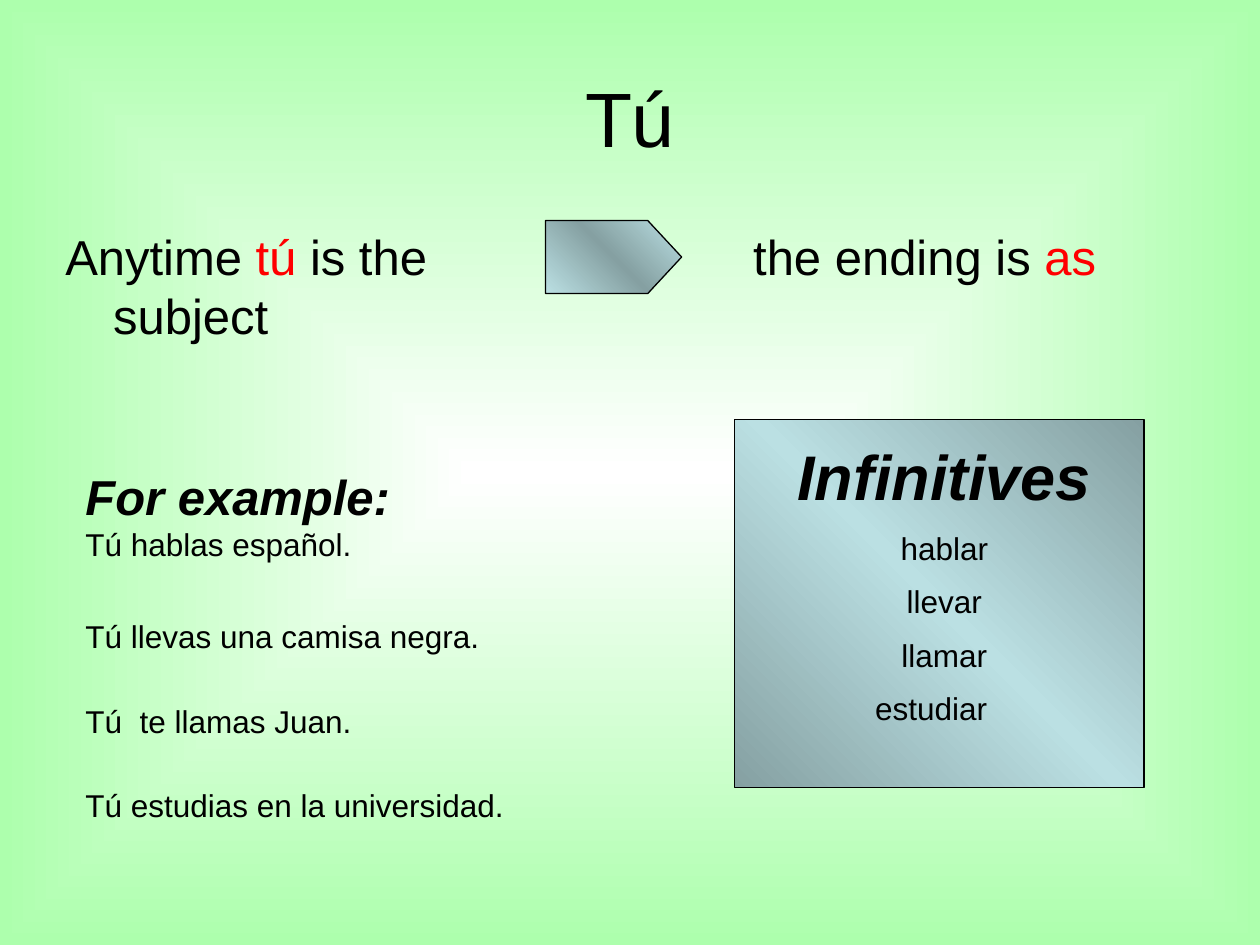
from dataclasses import dataclass

from lxml import etree
from pptx import Presentation
from pptx.dml.color import RGBColor
from pptx.enum.shapes import MSO_SHAPE
from pptx.enum.text import MSO_ANCHOR, MSO_AUTO_SIZE, PP_ALIGN
from pptx.oxml import parse_xml
from pptx.oxml.ns import nsdecls, qn
from pptx.util import Inches, Pt

CENTER = PP_ALIGN.CENTER
LEFT = PP_ALIGN.LEFT
MIDDLE = MSO_ANCHOR.MIDDLE
TOP = MSO_ANCHOR.TOP
GROW = MSO_AUTO_SIZE.SHAPE_TO_FIT_TEXT
FIXED = MSO_AUTO_SIZE.NONE
PENTAGON = MSO_SHAPE.PENTAGON
RECT = MSO_SHAPE.RECTANGLE


@dataclass(frozen=True)
class Theme:
    font: str = "Arial"
    ink: str = "000000"
    accent: str = "FF0000"
    white: str = "FFFFFF"
    mint: str = "ADFFAD"
    steel: str = "BBE0E3"
    shade: int = 46275
    title: int = 44
    head: int = 36
    lead: int = 28
    body: int = 18
    line: float = 0.75


THEME = Theme()


@dataclass(frozen=True)
class Box:
    left: float
    top: float
    width: float
    height: float

    def place(self) -> tuple:
        return tuple(map(Inches, (self.left, self.top, self.width, self.height)))


@dataclass(frozen=True)
class Span:
    text: str
    size: int = THEME.body
    color: str = THEME.ink
    strong: bool = False


@dataclass(frozen=True)
class Para:
    spans: tuple
    align: int = LEFT
    hang: float = 0
    inset: float = 0
    before: int = 0


@dataclass(frozen=True)
class Note:
    box: Box
    paras: tuple
    anchor: int = TOP
    size: int = GROW


@dataclass(frozen=True)
class Panel:
    box: Box
    kind: int
    darks: tuple
    adjust: tuple = ()


def set_grad(parent, stops: list, tail: str) -> None:
    marks = "".join(
        f'<a:gs pos="{pos * 1000}"><a:srgbClr val="{color}">'
        + (f'<a:shade val="{THEME.shade}"/>' if dark else "")
        + "</a:srgbClr></a:gs>"
        for pos, color, dark in stops
    )
    grad = parse_xml(
        f'<a:gradFill {nsdecls("a")} rotWithShape="1">'
        f"<a:gsLst>{marks}</a:gsLst>{tail}</a:gradFill>"
    )
    parent.replace(parent.find(qn("a:solidFill")), grad)


def draw_back(slide) -> None:
    slide.background.fill.solid()
    stops = [(0, THEME.white, False), (100, THEME.mint, False)]
    tail = '<a:path path="shape"><a:fillToRect l="50000" t="50000" r="50000" b="50000"/></a:path>'
    set_grad(slide.element.find(".//" + qn("p:bgPr")), stops, tail)


def draw_panel(slide, panel: Panel) -> None:
    shape = slide.shapes.add_shape(panel.kind, *panel.box.place())
    shape.shadow.inherit = False
    for spot, value in enumerate(panel.adjust):
        shape.adjustments[spot] = value
    shape.line.color.rgb = RGBColor.from_string(THEME.ink)
    shape.line.width = Pt(THEME.line)
    shape.fill.solid()
    stops = [(pos, THEME.steel, pos in panel.darks) for pos in (0, 50, 100)]
    set_grad(shape.element.spPr, stops, '<a:lin ang="18900000" scaled="1"/>')


def draw_note(slide, note: Note) -> None:
    frame = slide.shapes.add_textbox(*note.box.place()).text_frame
    frame.word_wrap = True
    frame.auto_size = note.size
    frame.vertical_anchor = note.anchor
    for spot, para in enumerate(note.paras):
        line = frame.add_paragraph() if spot else frame.paragraphs[0]
        line.alignment = para.align
        props = line._p.get_or_add_pPr()
        if para.hang:
            props.set("marL", str(Inches(para.hang)))
            props.set("indent", str(-Inches(para.hang)))
        if para.inset:
            props.set("marR", str(Inches(para.inset)))
        if para.before:
            space = etree.SubElement(props, qn("a:spcBef"))
            etree.SubElement(space, qn("a:spcPct")).set("val", str(para.before * 1000))
        for span in para.spans:
            run = line.add_run()
            run.text = span.text
            font = run.font
            font.name = THEME.font
            font.size = Pt(span.size)
            font.bold = font.italic = span.strong
            font.color.rgb = RGBColor.from_string(span.color)


def lead(text: str, color: str = THEME.ink) -> Span:
    return Span(text, THEME.lead, color)


def item(span: Span, inset: float = 0) -> Para:
    return Para((span,), CENTER, inset=inset, before=50)


def main() -> None:
    deck = Presentation()
    deck.slide_width, deck.slide_height = Inches(10), Inches(7.5)
    slide = deck.slides.add_slide(deck.slide_layouts[6])
    draw_back(slide)

    title = Para((Span("Tú", THEME.title),), CENTER)
    rule = Para((lead("Anytime "), lead("tú", THEME.accent), lead(" is the subject")), hang=0.38, before=20)
    ending = Para((lead("\tthe ending is "), lead("as", THEME.accent)), hang=0.38, before=20)
    draw_note(slide, Note(Box(0.5, 0.3, 9, 1.25), (title,), MIDDLE, FIXED))
    draw_note(slide, Note(Box(0.42, 1.75, 3.92, 1.58), (rule,), size=FIXED))
    draw_panel(slide, Panel(Box(4.33, 1.75, 1.08, 0.58), PENTAGON, (50,), (0.464,)))
    draw_note(slide, Note(Box(5.5, 1.75, 4, 4.95), (ending,), size=FIXED))

    intro = Para((Span("For example:", THEME.lead, strong=True),))
    first = Para((Span("Tú hablas español."),))
    draw_note(slide, Note(Box(0.58, 3.65, 7.67, 0.87), (intro, first)))
    others = ("Tú llevas una camisa negra.", "Tú  te llamas Juan.", "Tú estudias en la universidad.")
    for row, text in enumerate(others):
        draw_note(slide, Note(Box(0.58, 4.85 + row * 0.67, 7.83, 0.4), (Para((Span(text),)),)))

    draw_panel(slide, Panel(Box(5.83, 3.33, 3.25, 2.92), RECT, (0, 100)))
    head = item(Span("Infinitives", THEME.head, strong=True))
    verbs = tuple(item(Span(verb)) for verb in ("hablar", "llevar", "llamar"))
    last = item(Span("estudiar"), inset=0.21)
    draw_note(slide, Note(Box(6.08, 3.42, 2.83, 2.51), (head, *verbs, last)))
    deck.save("out.pptx")


if __name__ == "__main__":
    main()
